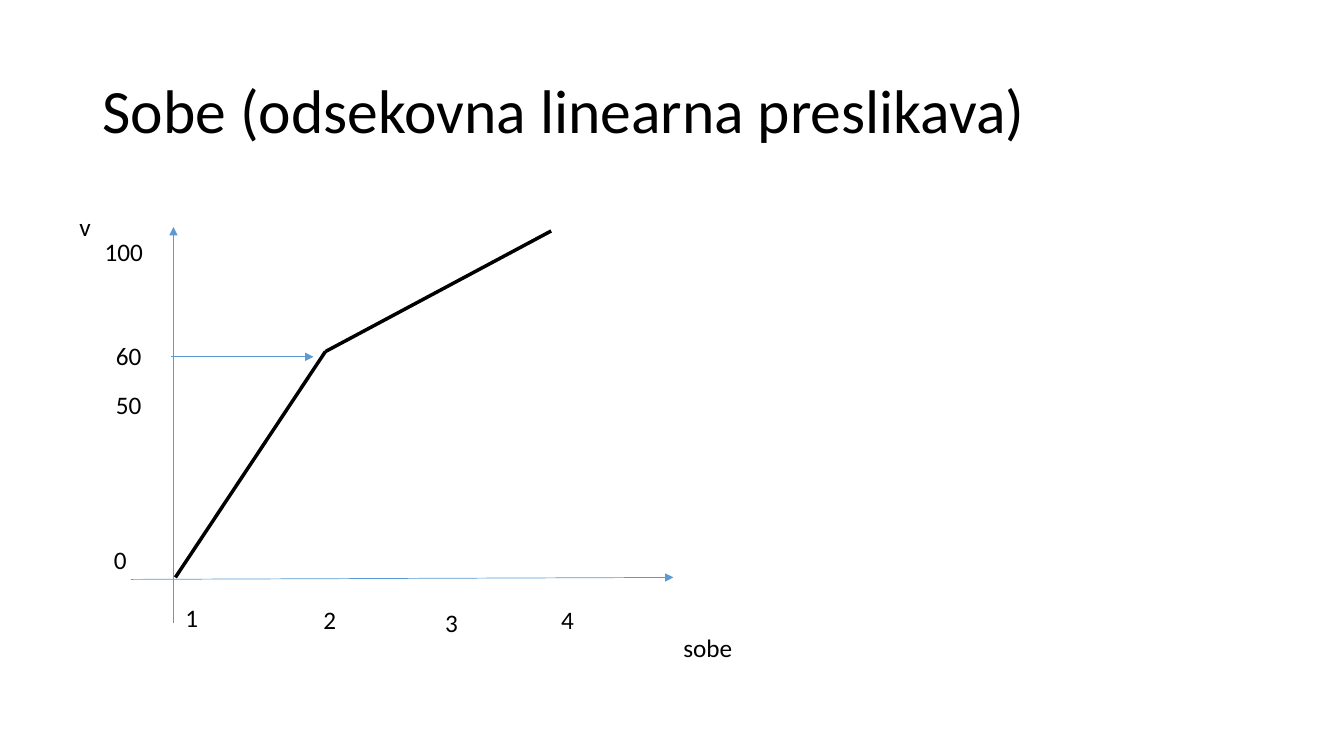
import pptx
import pptx.dml.color
import pptx.enum.shapes
import pptx.enum.text
import pptx.oxml.ns
import pptx.util
import lxml.etree
from dataclasses import dataclass
from itertools import pairwise

Cm = pptx.util.Cm

# Content: positions are in centimetres
HEADING = "Sobe (odsekovna linearna preslikava)"
LABELS = [  # text, left, top, width
    ("v", 1.75, 5.21, 0.81),
    ("100", 2.39, 5.82, 1.5),
    ("60", 2.67, 8.46, 1.17),
    ("50", 2.67, 9.68, 1.17),
    ("0", 2.62, 13.59, 0.84),
    ("1", 4.42, 15.06, 0.84),
    ("2", 7.9, 15.11, 0.84),
    ("3", 10.97, 15.19, 0.84),
    ("4", 13.89, 15.11, 0.84),
    ("sobe", 16.97, 15.82, 1.75),
]
ARROWS = [  # start, end
    ((4.37, 15.7), (4.37, 5.72)),     # value axis
    ((3.3, 14.6), (16.97, 14.55)),    # rooms axis
    ((4.32, 8.99), (7.9, 8.99)),      # guide at 60
]
VALUE_CURVE = [(4.42, 14.55), (8.2, 8.86), (13.89, 5.82)]


@dataclass(frozen=True)
class Theme:
    font: str = "Calibri"
    ink: str = "000000"
    axis: str = "5B9BD5"
    heading_size: float = 44
    label_size: float = 18
    curve_width: float = 2.5
    axis_width: float = 0.5


THEME = Theme()


def apply_format(target, values):
    for name, value in values.items():
        setattr(target, name, value)


def write(frame, text, size, **frame_format):
    apply_format(frame, frame_format)
    paragraph = frame.paragraphs[0]
    paragraph.text = text
    paragraph.alignment = pptx.enum.text.PP_ALIGN.LEFT
    font = paragraph.runs[0].font
    apply_format(font, {"name": THEME.font, "size": pptx.util.Pt(size)})
    font.color.rgb = pptx.dml.color.RGBColor.from_string(THEME.ink)
    return paragraph


def draw_line(slide, start, end, color, width, arrow=False):
    connector = slide.shapes.add_connector(
        pptx.enum.shapes.MSO_CONNECTOR.STRAIGHT, *map(Cm, start + end))
    connector.line.color.rgb = pptx.dml.color.RGBColor.from_string(color)
    connector.line.width = pptx.util.Pt(width)
    properties = connector._element.spPr
    if arrow:
        outline = properties.find(pptx.oxml.ns.qn("a:ln"))
        lxml.etree.SubElement(outline, pptx.oxml.ns.qn("a:tailEnd"), type="triangle")
    lxml.etree.SubElement(properties, pptx.oxml.ns.qn("a:effectLst"))


def main():
    presentation = pptx.Presentation()
    apply_format(presentation, {"slide_width": Cm(33.87), "slide_height": Cm(19.05)})
    slide = presentation.slides.add_slide(presentation.slide_layouts[5])

    heading = slide.shapes.title
    apply_format(heading, {"left": Cm(2.33), "top": Cm(1.01),
                           "width": Cm(29.21), "height": Cm(3.68)})
    write(heading.text_frame, HEADING, THEME.heading_size, word_wrap=True,
          vertical_anchor=pptx.enum.text.MSO_ANCHOR.MIDDLE).line_spacing = 0.9

    for start, end in ARROWS:
        draw_line(slide, start, end, THEME.axis, THEME.axis_width, arrow=True)
    for start, end in pairwise(VALUE_CURVE):
        draw_line(slide, start, end, THEME.ink, THEME.curve_width)

    for text, left, top, width in LABELS:
        label = slide.shapes.add_textbox(Cm(left), Cm(top), Cm(width), Cm(1.02))
        write(label.text_frame, text, THEME.label_size, word_wrap=False,
              auto_size=pptx.enum.text.MSO_AUTO_SIZE.SHAPE_TO_FIT_TEXT)

    presentation.save("out.pptx")


if __name__ == "__main__":
    main()
